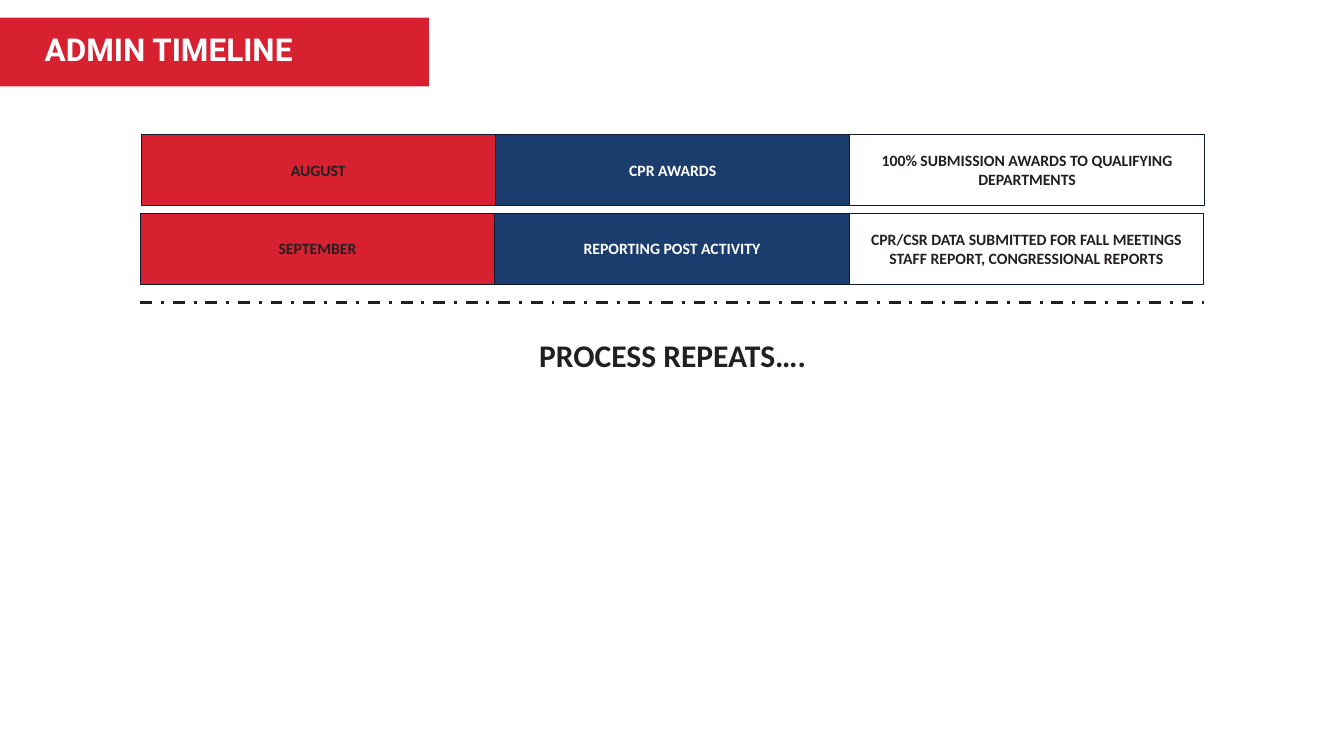
from pptx import Presentation
from pptx.dml.color import RGBColor
from pptx.enum.dml import MSO_LINE
from pptx.enum.shapes import MSO_CONNECTOR, MSO_SHAPE
from pptx.enum.text import MSO_ANCHOR as ANCHOR, MSO_AUTO_SIZE, PP_ALIGN as ALIGN
from pptx.oxml.ns import qn
from pptx.util import Inches, Pt
from lxml import etree

RED = RGBColor(0xD7, 0x21, 0x31)
NAVY = RGBColor(0x1B, 0x3D, 0x6D)
EDGE = RGBColor(0x0C, 0x1B, 0x30)
INK = RGBColor(0x23, 0x1F, 0x20)
WHITE = RGBColor(0xFF, 0xFF, 0xFF)


def write(shape, text, size=16, font="Calibri", color=INK,
          align=ALIGN.CENTER, anchor=ANCHOR.MIDDLE):
    frame = shape.text_frame
    frame.word_wrap = True
    frame.auto_size = MSO_AUTO_SIZE.NONE
    frame.vertical_anchor = anchor
    paragraph = frame.paragraphs[0]
    paragraph.alignment = align
    run = paragraph.add_run()
    run.text = text
    run.font.name = font
    run.font.size = Pt(size)
    run.font.bold = True
    run.font.color.rgb = color


def add_box(left, top, width, height, fill):
    box = slide.shapes.add_shape(MSO_SHAPE.RECTANGLE, Inches(left), Inches(top),
                                 Inches(width), Inches(height))
    box.shadow.inherit = False
    box.fill.solid()
    box.fill.fore_color.rgb = fill
    return box


prs = Presentation()
prs.slide_width, prs.slide_height = Inches(18.96), Inches(10.67)
slide = prs.slides.add_slide(prs.slide_layouts[5])

# Title on a red banner, which goes behind it
banner = add_box(0, 0.25, 6.05, 0.97, RED)
banner.line.fill.background()
slide.shapes._spTree.insert(2, banner._element)

title = slide.shapes.title
title.left, title.top = Inches(0.53), Inches(0.43)
title.width, title.height = Inches(4.55), Inches(0.57)
title.text_frame.margin_top = title.text_frame.margin_bottom = 0
write(title, "ADMIN TIMELINE", size=32, font="Roboto", color=WHITE,
      align=ALIGN.LEFT, anchor=ANCHOR.TOP)

# Timeline rows: month, activity, detail
timeline = [
    (1.99, 1.9, ("AUGUST", "CPR AWARDS",
                 "100% SUBMISSION AWARDS TO QUALIFYING DEPARTMENTS")),
    (1.98, 3.01, ("SEPTEMBER", "REPORTING POST ACTIVITY",
                  "CPR/CSR DATA SUBMITTED FOR FALL MEETINGS "
                  "STAFF REPORT, CONGRESSIONAL REPORTS")),
]
column_colors = [(RED, INK), (NAVY, WHITE), (WHITE, INK)]
column_width = 5
for left, top, entries in timeline:
    for column, (entry, (fill, color)) in enumerate(zip(entries, column_colors)):
        cell = add_box(left + column * column_width, top, column_width, 1, fill)
        cell.line.color.rgb = EDGE
        cell.line.width = Pt(1)
        write(cell, entry, color=color)

# Divider
divider = slide.shapes.add_connector(MSO_CONNECTOR.STRAIGHT, Inches(1.98), Inches(4.27),
                                     Inches(16.98), Inches(4.27))
divider.line.color.rgb = INK
divider.line.width = Pt(3)
divider.line.dash_style = MSO_LINE.DASH_DOT
etree.SubElement(divider._element.spPr, qn("a:effectLst"))

# Closing note
closing = slide.shapes.add_textbox(Inches(1.99), Inches(4.7), Inches(15), Inches(0.64))
write(closing, "PROCESS REPEATS….", size=32, anchor=ANCHOR.TOP)

prs.save("out.pptx")
